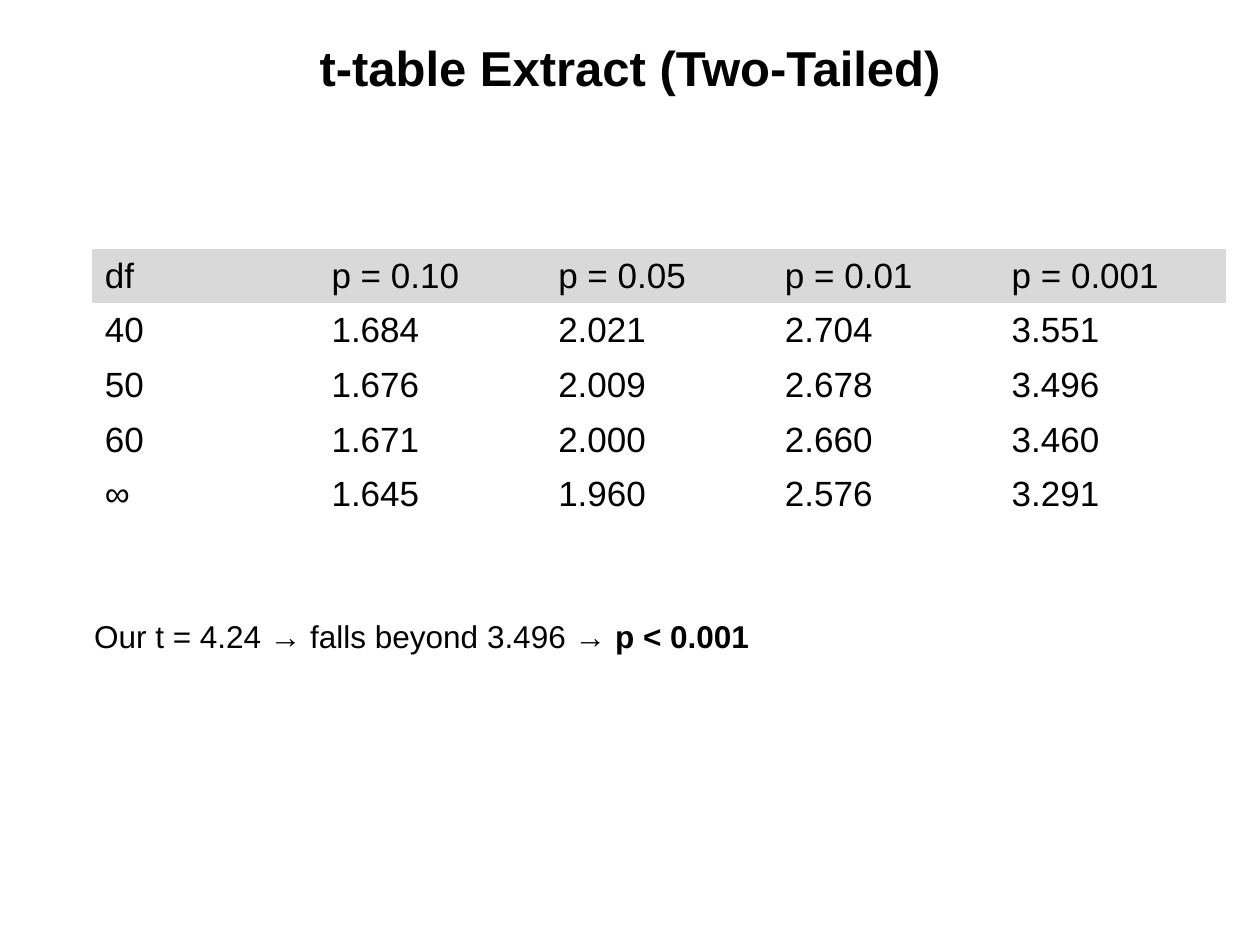
from dataclasses import dataclass

from pptx import Presentation
from pptx.dml.color import RGBColor
from pptx.enum.text import MSO_ANCHOR as Anchor, PP_ALIGN as Align
from pptx.oxml.ns import qn
from pptx.util import Cm, Pt


@dataclass(frozen=True)
class Theme:
    font: str = "Arial"
    ink: RGBColor = RGBColor(0x00, 0x00, 0x00)
    header: RGBColor = RGBColor(0xD9, 0xD9, 0xD9)
    title: int = 28
    table: int = 20
    note: int = 18


THEME = Theme()
NO_STYLE = "{2D5ABB26-0587-4C30-8999-92F81FD0307C}"
T_TABLE = [
    ("df", "p = 0.10", "p = 0.05", "p = 0.01", "p = 0.001"),
    ("40", "1.684", "2.021", "2.704", "3.551"),
    ("50", "1.676", "2.009", "2.678", "3.496"),
    ("60", "1.671", "2.000", "2.660", "3.460"),
    ("∞", "1.645", "1.960", "2.576", "3.291"),
]


def style(p, size, bold=False):
    """Format every run of a paragraph with the theme font."""
    for r in p.runs:
        r.font.name = THEME.font
        r.font.size = Pt(size)
        r.font.bold = bold
        r.font.color.rgb = THEME.ink


def add_text(s, left, top, width, height, text, size, bold=False):
    tf = s.shapes.add_textbox(Cm(left), Cm(top), Cm(width), Cm(height)).text_frame
    tf.word_wrap = True
    tf.text = text
    style(tf.paragraphs[0], size, bold)
    return tf


prs = Presentation()
prs.slide_width, prs.slide_height = Cm(25.4), Cm(19.05)
s = prs.slides.add_slide(prs.slide_layouts[6])

# Title
tf = add_text(s, 1.27, 0.76, 22.86, 2.31, "t-table Extract (Two-Tailed)", THEME.title, bold=True)
tf.margin_top = 0
tf.vertical_anchor = Anchor.TOP
tf.paragraphs[0].alignment = Align.CENTER

# Critical values
row_height, col_width = 1.04, 4.57
n_rows, n_cols = len(T_TABLE), len(T_TABLE[0])
table = s.shapes.add_table(n_rows, n_cols, Cm(1.86), Cm(5.01),
                           Cm(col_width * n_cols), Cm(row_height * n_rows)).table
table.first_row = table.horz_banding = False
table._tbl.tblPr.find(qn("a:tableStyleId")).text = NO_STYLE
for i, values in enumerate(T_TABLE):
    for j, value in enumerate(values):
        cell = table.cell(i, j)
        cell.text = value
        cell.vertical_anchor = Anchor.MIDDLE
        style(cell.text_frame.paragraphs[0], THEME.table)
        if i == 0:
            cell.fill.solid()
            cell.fill.fore_color.rgb = THEME.header
        else:
            cell.fill.background()

# Conclusion
tf = add_text(s, 1.65, 12.32, 17.25, 1.02, "Our t = 4.24 → falls beyond 3.496 → ", THEME.note)
tf.vertical_anchor = Anchor.MIDDLE
p = tf.paragraphs[0]
r = p.add_run()
r.text = "p < 0.001"
style(p, THEME.note)
r.font.bold = True

prs.save("out.pptx")
